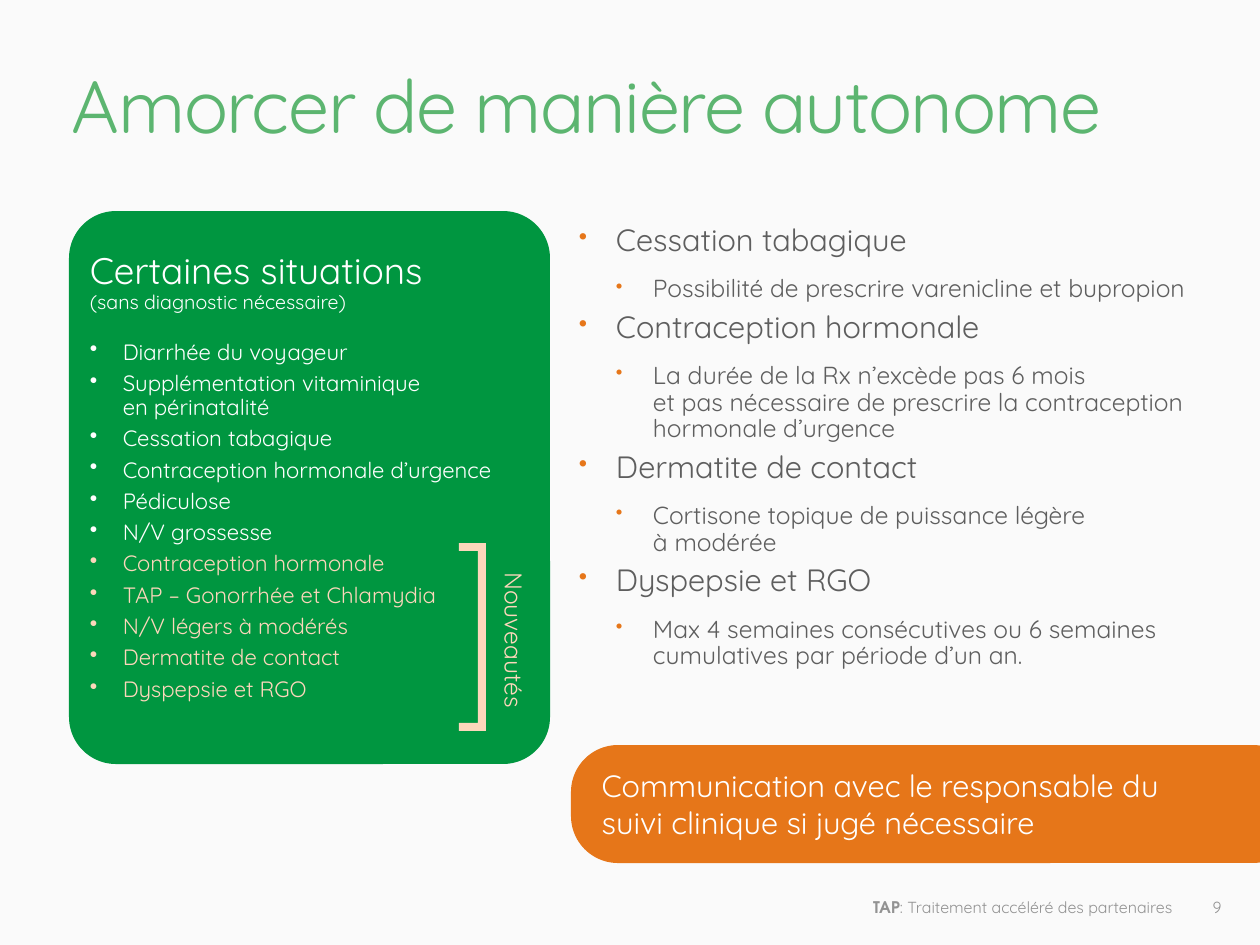
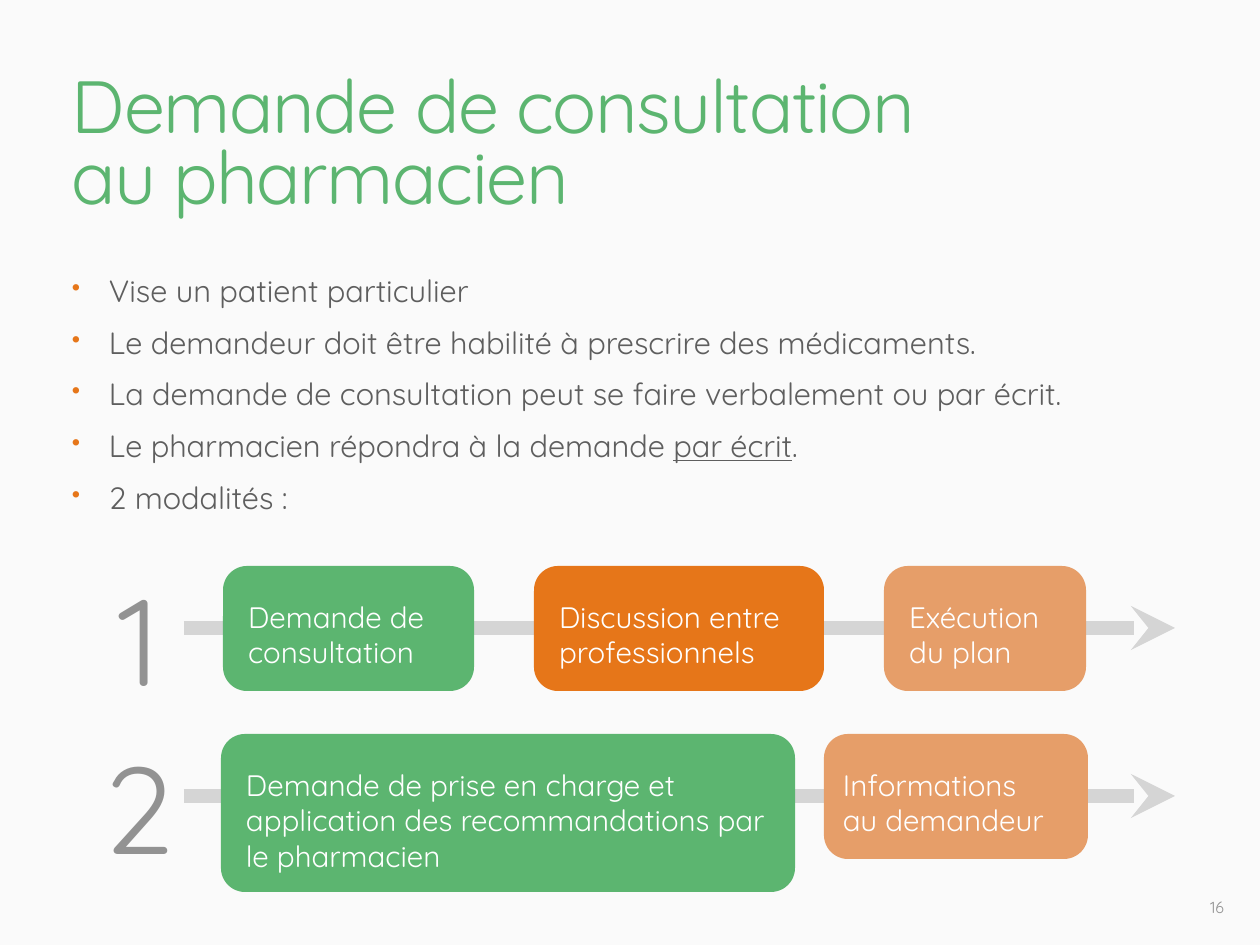
import pptx
import pptx.util
import pptx.dml.color
import pptx.enum.shapes
import pptx.enum.text
import pptx.oxml.ns
from lxml import etree

PX = 10320
FONT = "Quicksand"
TAP_FONT = "TeX Gyre Adventor"
COLOURS = {
    "paper": "FAFAFA", "title": "5CB570", "body": "5E5E5E", "muted": "929292",
    "white": "FFFFFF", "green": "009640", "orange": "E67619", "pale orange": "E69E69",
    "peach": "FCD7BB", "arrow": "D5D5D5",
}
ALIGN = pptx.enum.text.PP_ALIGN
ANCHOR = pptx.enum.text.MSO_ANCHOR
ROUNDED = pptx.enum.shapes.MSO_SHAPE.ROUNDED_RECTANGLE

SITUATIONS = [
    "Diarrhée du voyageur", "Supplémentation vitaminique\ven périnatalité",
    "Cessation tabagique", "Contraception hormonale d’urgence", "Pédiculose",
    "N/V grossesse",
]
NEW_SITUATIONS = [
    "Contraception hormonale", "TAP – Gonorrhée et Chlamydia",
    "N/V légers à modérés", "Dermatite de contact", "Dyspepsie et RGO",
]
CONDITIONS = [
    ("Cessation tabagique", "Possibilité de prescrire varenicline et bupropion"),
    ("Contraception hormonale",
     "La durée de la Rx n’excède pas 6 mois\vet pas nécessaire de prescrire "
     "la contraception hormonale d’urgence"),
    ("Dermatite de contact", "Cortisone topique de puissance légère\và modérée"),
    ("Dyspepsie et RGO",
     "Max 4 semaines consécutives ou 6 semaines cumulatives par période d’un an."),
]
REQUEST_RULES = [
    ["Vise un patient particulier"],
    ["Le demandeur doit être habilité à prescrire des médicaments."],
    ["La demande de consultation peut se faire verbalement ou par écrit."],
    ["Le pharmacien répondra à la demande ", "par écrit", "."],
    ["2 modalités :"],
]
MODALITIES = [
    ("1", [(223, 251, 125, 25, "title", "Demande de consultation"),
           (534, 290, 125, 25, "orange", "Discussion entre professionnels"),
           (884, 202, 125, 25, "pale orange", "Exécution\vdu plan")]),
    ("2", [(824, 264, 125, 19, "pale orange", "Informations\vau demandeur"),
           (221, 574, 158, 25, "title",
            "Demande de prise en charge et application des recommandations "
            "par le pharmacien")]),
]


def px(length):
    """Turn a length in px into EMU."""
    return pptx.util.Emu(length * PX)


def rgb(name):
    """Look up a named colour."""
    return pptx.dml.color.RGBColor.from_string(COLOURS[name])


def set_frame(frame, margins=(5, 5, 5, 5), anchor=ANCHOR.TOP):
    """Set wrapping, anchor and left, top, right and bottom margins."""
    frame.auto_size = pptx.enum.text.MSO_AUTO_SIZE.NONE
    frame.word_wrap = True
    frame.vertical_anchor = anchor
    (frame.margin_left, frame.margin_top,
     frame.margin_right, frame.margin_bottom) = map(px, margins)
    return frame


def add_bullet(paragraph, colour, indent, hang, percent):
    """Give a paragraph a hanging bullet."""
    properties = paragraph._p.get_or_add_pPr()
    properties.set("marL", str(px(indent)))
    properties.set("indent", str(px(-hang)))
    qn = pptx.oxml.ns.qn
    tint = etree.SubElement(properties, qn("a:buClr"))
    etree.SubElement(tint, qn("a:srgbClr"), val=COLOURS[colour])
    etree.SubElement(properties, qn("a:buSzPct"), val=str(percent * 1000))
    etree.SubElement(properties, qn("a:buChar"), char="•")


def write(frame, text, size, colour, align=ALIGN.LEFT, spacing=None, before=0, bullet=None):
    """Write one paragraph, from a string or a list of runs."""
    paragraph = frame.paragraphs[-1]
    if paragraph.runs:
        paragraph = frame.add_paragraph()
    if isinstance(text, str):
        paragraph.text = text
    else:
        for piece in text:
            paragraph.add_run().text = piece
    if bullet:
        add_bullet(paragraph, *bullet)
    paragraph.alignment = align
    paragraph.line_spacing = spacing
    paragraph.space_before = pptx.util.Pt(before)
    paragraph.font.name = FONT
    paragraph.font.size = pptx.util.Pt(size)
    paragraph.font.color.rgb = rgb(colour)
    return paragraph


def add_text_frame(slide, box, anchor=ANCHOR.TOP, rotation=0):
    """Add an empty text box and return its frame."""
    holder = slide.shapes.add_textbox(*map(px, box))
    holder.rotation = rotation
    return set_frame(holder.text_frame, anchor=anchor)


def paint(shape, colour):
    """Fill a shape flatly, without line or shadow."""
    shape.shadow.inherit = False
    shape.fill.solid()
    shape.fill.fore_color.rgb = rgb(colour)
    shape.line.fill.background()


def add_card(slide, box, radius, colour, margins, anchor=ANCHOR.TOP):
    """Add a rounded card and return its text frame."""
    card = slide.shapes.add_shape(ROUNDED, *map(px, box))
    card.adjustments[0] = radius / min(box[2:])
    paint(card, colour)
    return set_frame(card.text_frame, margins, anchor)


def add_bracket(slide, left, top, width, height, thickness, colour):
    """Add a square closing bracket."""
    right, bottom = left + width, top + height
    inner = right - thickness
    builder = slide.shapes.build_freeform(left, top, scale=PX)
    builder.add_line_segments([
        (right, top), (right, bottom), (left, bottom), (left, bottom - thickness),
        (inner, bottom - thickness), (inner, top + thickness), (left, top + thickness),
    ])
    paint(builder.convert_to_shape(), colour)


def add_arrow(slide, left, right, y):
    """Add a broad horizontal arrow."""
    arrow = slide.shapes.add_connector(
        pptx.enum.shapes.MSO_CONNECTOR.STRAIGHT, px(left), px(y), px(right), px(y))
    arrow.line.color.rgb = rgb("arrow")
    arrow.line.width = pptx.util.Pt(12)
    qn = pptx.oxml.ns.qn
    etree.SubElement(arrow.line._get_or_add_ln(), qn("a:tailEnd"), type="stealth")
    etree.SubElement(arrow._element.spPr, qn("a:effectLst"))


def add_slide(deck, title, number):
    """Add a slide with the shared title style and page number."""
    slide = deck.slides.add_slide(deck.slide_layouts[5])
    heading = slide.shapes.title
    heading.left, heading.top, heading.width, heading.height = map(px, (67, 72, 1176, 172))
    paragraph = write(set_frame(heading.text_frame), title, 60, "title", spacing=0.8)
    for run in paragraph.runs:
        run._r.get_or_add_rPr().set("spc", "-120")
    page = add_text_frame(slide, (1200, 895, 34, 27), ANCHOR.BOTTOM)
    write(page, number, 13, "muted", ALIGN.CENTER)
    return slide


def build_autonomy(deck):
    """Build the slide on starting treatment autonomously."""
    slide = add_slide(deck, "Amorcer de manière autonome", "9")

    conditions = add_text_frame(slide, (574, 220, 663, 493))
    for condition, detail in CONDITIONS:
        write(conditions, condition, 25, "body", spacing=0.9, before=7,
              bullet=("orange", 37, 37, 80))
        write(conditions, detail, 20, "body", spacing=0.9, before=15,
              bullet=("orange", 74, 37, 80)).level = 1

    notice = add_card(slide, (571, 745, 729, 118), 47, "orange", (17, 0, 96, 0), ANCHOR.MIDDLE)
    write(notice, "Communication avec le responsable du suivi clinique si jugé nécessaire",
          25, "white")

    panel = add_card(slide, (69, 211, 481, 553), 47, "green", (7, 28, 0, 0))
    write(panel, "Certaines situations", 30, "white", spacing=0.9)
    write(panel, "(sans diagnostic nécessaire)", 16, "white", spacing=0.9)
    for colour, situations in (("white", SITUATIONS), ("peach", NEW_SITUATIONS)):
        for situation in situations:
            before = 22 if situation == SITUATIONS[0] else 6
            write(panel, situation, 18, colour, spacing=0.9, before=before,
                  bullet=(colour, 33, 33, 100))

    add_bracket(slide, 459, 543, 27, 188, 8, "peach")
    novelties = add_text_frame(slide, (436, 623, 157, 34), ANCHOR.MIDDLE, rotation=90)
    write(novelties, "Nouveautés", 20, "peach", ALIGN.CENTER)

    footnote = add_text_frame(slide, (844, 895, 333, 27), ANCHOR.BOTTOM)
    abbreviation = write(footnote, ["TAP", ": Traitement accéléré des partenaires"],
                         13, "muted", ALIGN.RIGHT).runs[0]
    abbreviation.font.name = TAP_FONT
    abbreviation.font.bold = True


def build_consultation(deck):
    """Build the slide on consultation requests."""
    slide = add_slide(deck, "Demande de consultation\vau pharmacien", "16")

    rules = add_text_frame(slide, (67, 271, 1113, 289))
    for rule in REQUEST_RULES:
        paragraph = write(rules, rule, 25, "body", spacing=0.9, before=15,
                          bullet=("orange", 37, 37, 80))
        for run in paragraph.runs[1:2]:
            run.font.underline = True

    for row, (digit, steps) in enumerate(MODALITIES):
        top = 566 + 168 * row
        add_arrow(slide, 184, 1175, top + 62)
        for left, width, height, inset, colour, step in steps:
            card = add_card(slide, (left, top, width, height), 24, colour,
                            (inset - 7, 26, 5, 0))
            write(card, step, 24, "white")
        numeral = add_text_frame(slide, (97, top + 5, 83, 133), ANCHOR.MIDDLE)
        write(numeral, digit, 100, "muted", ALIGN.CENTER)


def main():
    """Build and save the presentation."""
    deck = pptx.Presentation()
    deck.slide_width, deck.slide_height = px(1260), px(945)
    backdrop = deck.slide_master.background.fill
    backdrop.solid()
    backdrop.fore_color.rgb = rgb("paper")
    build_autonomy(deck)
    build_consultation(deck)
    deck.save("out.pptx")


if __name__ == "__main__":
    main()
